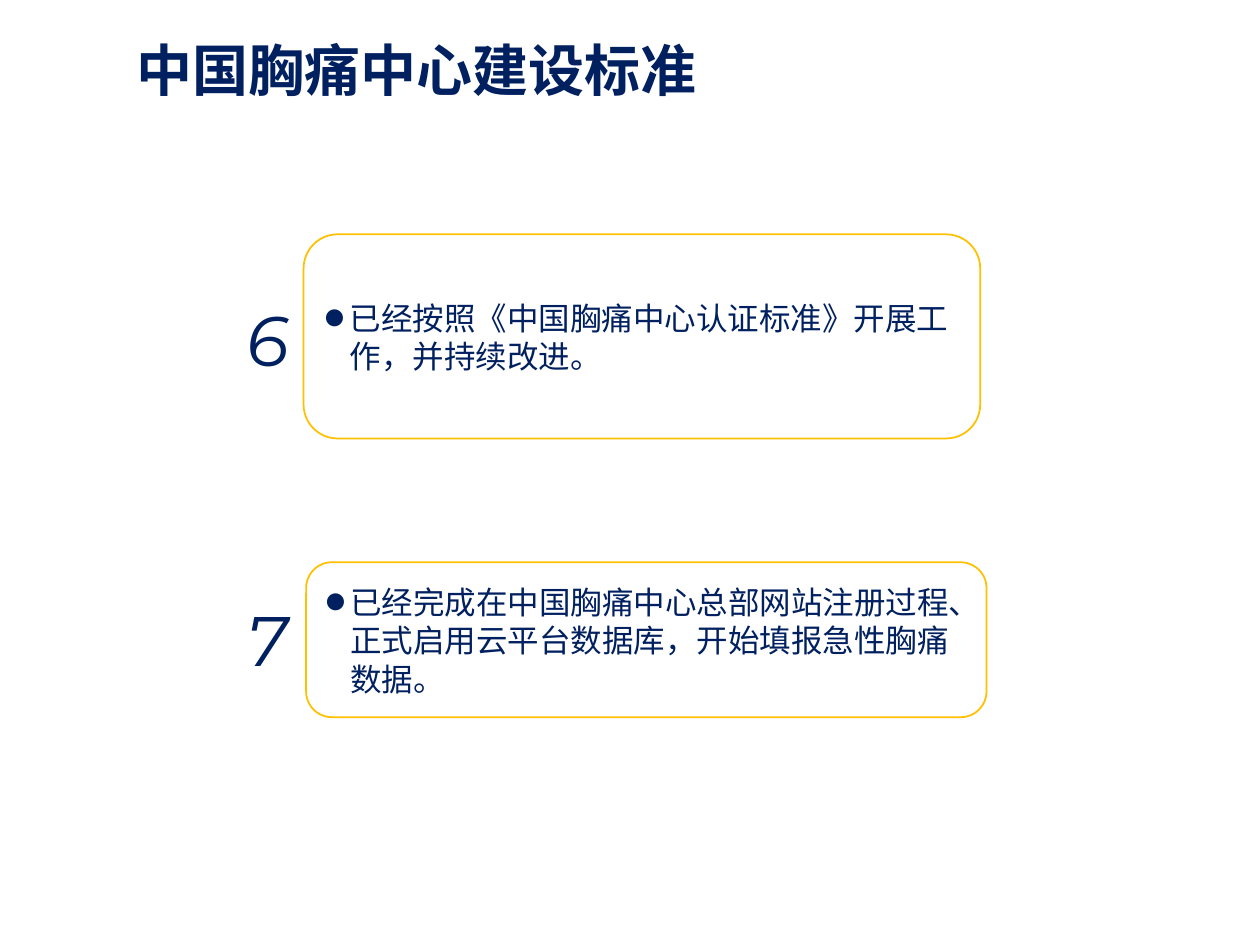
from lxml.etree import SubElement as Sub
from pptx import Presentation
from pptx.dml.color import RGBColor as RGB
from pptx.enum.shapes import MSO_SHAPE as Shape
from pptx.enum.text import MSO_ANCHOR as Anchor, MSO_AUTO_SIZE as Fit, PP_ALIGN as Align
from pptx.oxml.ns import qn
from pptx.util import Inches, Pt

INK = {"navy": "002060", "gold": "FFC000", "white": "FFFFFF"}
CJK = "Noto Sans CJK SC"

deck = Presentation()
deck.slide_width, deck.slide_height = Inches(10), Inches(7.5)
W, H = deck.slide_width, deck.slide_height
slide = deck.slides.add_slide(deck.slide_layouts[5])


def place(x, y, w, h):
    return int(x * W), int(y * H), int(w * W), int(h * H)


def style(para, face, size, bold=False, italic=False):
    para.alignment = Align.LEFT
    for run in para.runs:
        font = run.font
        font.name, font.size = face, Pt(size)
        font.bold, font.italic = bold, italic
        font.color.rgb = RGB.from_string(INK["navy"])
        Sub(font._element, qn("a:ea"), typeface=face)


title = slide.shapes.title
title.left, title.top, title.width, title.height = place(0.098, 0.031, 0.5, 0.085)
frame = title.text_frame
frame.text = "中国胸痛中心建设标准"
frame.auto_size = Fit.NONE
frame.vertical_anchor = Anchor.MIDDLE
style(frame.paragraphs[0], CJK, 32, bold=True)

items = [
    ("6", "已经按照《中国胸痛中心认证标准》开展工作，并持续改进。",
     (0.241, 0.248, 0.537, 0.216), 0.307),
    ("7", "已经完成在中国胸痛中心总部网站注册过程、正式启用云平台数据库，开始填报急性胸痛数据。",
     (0.243, 0.595, 0.54, 0.164), 0.625),
]

for num, text, area, top in items:
    card = slide.shapes.add_shape(Shape.ROUNDED_RECTANGLE, *place(*area))
    card.shadow.inherit = False
    card.fill.solid()
    card.fill.fore_color.rgb = RGB.from_string(INK["white"])
    card.line.color.rgb = RGB.from_string(INK["gold"])
    card.line.width = Pt(1)
    frame = card.text_frame
    frame.text = text
    frame.word_wrap = True
    frame.vertical_anchor = Anchor.MIDDLE
    para = frame.paragraphs[0]
    props = para._p.get_or_add_pPr()
    props.set("marL", str(Inches(0.19)))
    props.set("indent", str(-Inches(0.19)))
    Sub(Sub(props, qn("a:buClr")), qn("a:srgbClr"), val=INK["navy"])
    Sub(props, qn("a:buSzPct"), val="60000")
    Sub(props, qn("a:buFont"), typeface=CJK)
    Sub(props, qn("a:buChar"), char="●")
    para.line_spacing = Pt(22)
    style(para, CJK, 18)

    label = slide.shapes.add_textbox(*place(0.186, top, 0.039, 0.103))
    frame = label.text_frame
    frame.text = num
    frame.word_wrap = False
    style(frame.paragraphs[0], "Montserrat", 40, italic=True)

deck.save("out.pptx")
